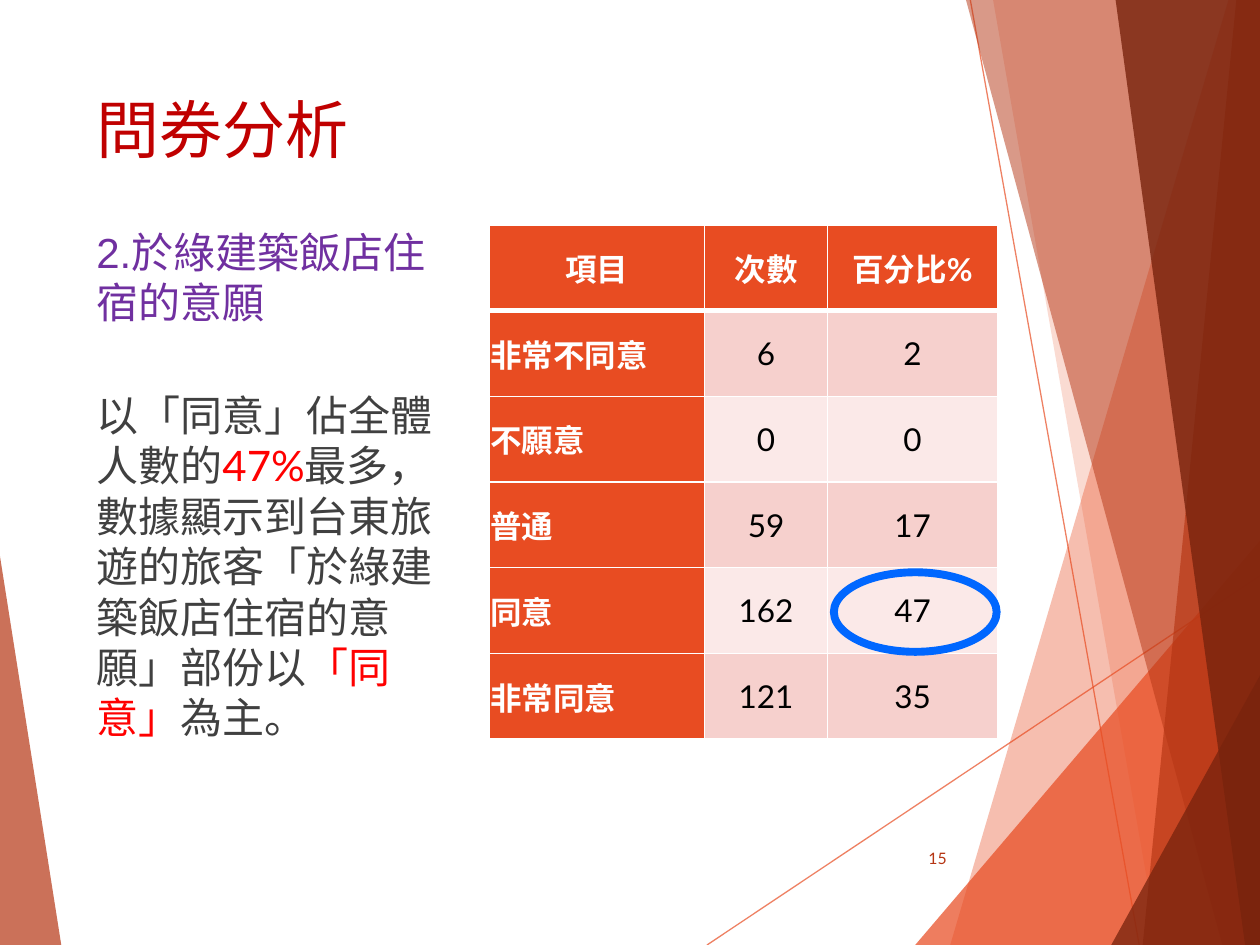
from dataclasses import dataclass

from lxml.etree import SubElement
from pptx import Presentation
from pptx.dml.color import RGBColor as Rgb
from pptx.enum.shapes import MSO_CONNECTOR as Connector, MSO_SHAPE as Shape
from pptx.enum.text import MSO_ANCHOR as Anchor, PP_ALIGN as Align
from pptx.oxml import parse_xml
from pptx.oxml.ns import nsdecls, qn
from pptx.util import Pt


@dataclass(frozen=True)
class Theme:
    orange: str = "E84C22"
    rust: str = "B53513"
    maroon: str = "78230D"
    title: str = "C00000"
    question: str = "7030A0"
    body: str = "404040"
    emphasis: str = "FF0000"
    ring: str = "0067FF"
    white: str = "FFFFFF"
    black: str = "000000"
    bands: tuple = ("F6D0CD", "FBE9E8")
    title_size: int = 36
    body_size: int = 24
    table_size: int = 18
    number_size: int = 9
    heading_font: str = "Arial"
    body_font: str = "Lato"


THEME = Theme()

RAYS = [
    ((404, 540), (720, 329)),
    ((554.5, 0), (651, 540)),
]

FACETS = [
    (THEME.orange, 36, [(702, 0), (543, 540), (720, 540), (720, 0)]),
    (THEME.orange, 20, [(567.5, 0), (662, 540), (720, 540), (720, 0)]),
    (THEME.orange, 72, [(523, 540), (720, 309), (720, 540)]),
    (THEME.rust, 50, [(552, 0), (698.5, 540), (720, 540), (720, 0)]),
    (THEME.rust, 66, [(706.5, 0), (653, 540), (720, 540), (720, 0)]),
    (THEME.maroon, 80, [(637.5, 0), (711.5, 540), (720, 540), (720, 0)]),
    (THEME.maroon, 76, [(635, 540), (720, 386), (720, 540)]),
    (THEME.rust, 70, [(0, 318), (35, 540), (0, 540)]),
]

SURVEY = [
    ("項目", "次數", "百分比%"),
    ("非常不同意", "6", "2"),
    ("不願意", "0", "0"),
    ("普通", "59", "17"),
    ("同意", "162", "47"),
    ("非常同意", "121", "35"),
]

FINDING = [
    ("以「同意」佔全體人數的", THEME.body),
    ("47%", THEME.emphasis),
    ("最多，數據顯示到台東旅遊的旅客「於綠建築飯店住宿的意願」部份以", THEME.body),
    ("「同意」", THEME.emphasis),
    ("為主。", THEME.body),
]


def apply_format(target, values):
    for name, value in values.items():
        setattr(target, name, value)


def set_opacity(drawn, percent):
    for color in drawn._element.spPr.iter(qn("a:srgbClr")):
        SubElement(color, qn("a:alpha"), val=str(percent * 1000))


def paint(fill, color):
    fill.solid()
    fill.fore_color.rgb = Rgb.from_string(color)


def add_ray(slide, start, end):
    ray = slide.shapes.add_connector(
        Connector.STRAIGHT, *(Pt(value) for value in start + end))
    paint(ray.line.fill, THEME.orange)
    ray.line.width = Pt(0.75)
    set_opacity(ray, 70)
    SubElement(ray._element.spPr, qn("a:effectLst"))


def add_facet(slide, color, opacity, corners):
    start, *others = [(Pt(x), Pt(y)) for x, y in corners]
    outline = slide.shapes.build_freeform(*start)
    outline.add_line_segments(others, close=True)
    facet = outline.convert_to_shape()
    facet.shadow.inherit = False
    facet.line.fill.background()
    paint(facet.fill, color)
    set_opacity(facet, opacity)


def write_runs(paragraph, runs, size, font, bold=False):
    for wording, color in runs:
        run = paragraph.add_run()
        run.text = wording
        apply_format(run.font, {"size": Pt(size), "name": font, "bold": bold})
        run.font.color.rgb = Rgb.from_string(color)


def add_text(slide, box, runs, size, font, frame_format=None, paragraph_format=None):
    frame = slide.shapes.add_textbox(*map(Pt, box)).text_frame
    apply_format(frame, {"word_wrap": True, **(frame_format or {})})
    apply_format(frame.paragraphs[0], paragraph_format or {})
    write_runs(frame.paragraphs[0], runs, size, font)


def set_borders(cell, widths):
    properties = cell._tc.get_or_add_tcPr()
    for position, (side, width) in enumerate(widths.items()):
        properties.insert(position, parse_xml(
            f'<a:ln{side} {nsdecls("a")} w="{Pt(width)}"><a:solidFill>'
            f'<a:srgbClr val="{THEME.white}"/></a:solidFill></a:ln{side}>'))


def add_survey_table(slide, left, top, column_widths, row_height):
    table = slide.shapes.add_table(
        len(SURVEY), len(column_widths), Pt(left), Pt(top),
        Pt(sum(column_widths)), Pt(row_height * len(SURVEY))).table
    table.first_col = True
    for column, width in zip(table.columns, column_widths):
        column.width = Pt(width)
    for r, answers in enumerate(SURVEY):
        table.rows[r].height = Pt(row_height)
        for c, wording in enumerate(answers):
            cell = table.cell(r, c)
            heading = r == 0 or c == 0
            apply_format(cell, {
                "vertical_anchor": Anchor.MIDDLE,
                "margin_left": Pt(0.75), "margin_right": Pt(0.75),
                "margin_top": 0, "margin_bottom": 0,
            })
            paint(cell.fill, THEME.orange if heading else THEME.bands[(r - 1) % 2])
            set_borders(cell, {"L": 1, "R": 1, "T": 3 if r == 1 else 1,
                               "B": 3 if r == 0 else 1})
            paragraph = cell.text_frame.paragraphs[0]
            paragraph.alignment = Align.LEFT if c == 0 and r > 0 else Align.CENTER
            color = THEME.white if heading else THEME.black
            write_runs(paragraph, [(wording, color)], THEME.table_size,
                       THEME.body_font, heading)


def add_ring(slide, box):
    ring = slide.shapes.add_shape(Shape.OVAL, *map(Pt, box))
    ring.shadow.inherit = False
    ring.fill.background()
    paint(ring.line.fill, THEME.ring)
    ring.line.width = Pt(4.5)


def main():
    deck = Presentation()
    apply_format(deck, {"slide_width": Pt(720), "slide_height": Pt(540)})
    slide = deck.slides.add_slide(deck.slide_layouts[6])
    for start, end in RAYS:
        add_ray(slide, start, end)
    for color, opacity, corners in FACETS:
        add_facet(slide, color, opacity, corners)
    add_text(slide, (48, 118, 220, 101), [("2.於綠建築飯店住宿的意願", THEME.question)],
             THEME.body_size, THEME.heading_font,
             {"vertical_anchor": Anchor.BOTTOM, "margin_bottom": Pt(32)})
    add_survey_table(slide, 279.5, 128.5, (123, 70.5, 97), 49)
    add_text(slide, (48, 219, 220, 204), FINDING, THEME.body_size, THEME.body_font,
             paragraph_format={"space_before": Pt(10)})
    add_text(slide, (507.5, 476, 40.5, 29), [("15", THEME.rust)],
             THEME.number_size, THEME.body_font,
             {"vertical_anchor": Anchor.MIDDLE}, {"alignment": Align.RIGHT})
    add_text(slide, (48, 48, 500, 104), [("問券分析", THEME.title)],
             THEME.title_size, THEME.heading_font)
    add_ring(slide, (476.5, 327, 93, 45.5))
    deck.save("out.pptx")


if __name__ == "__main__":
    main()
